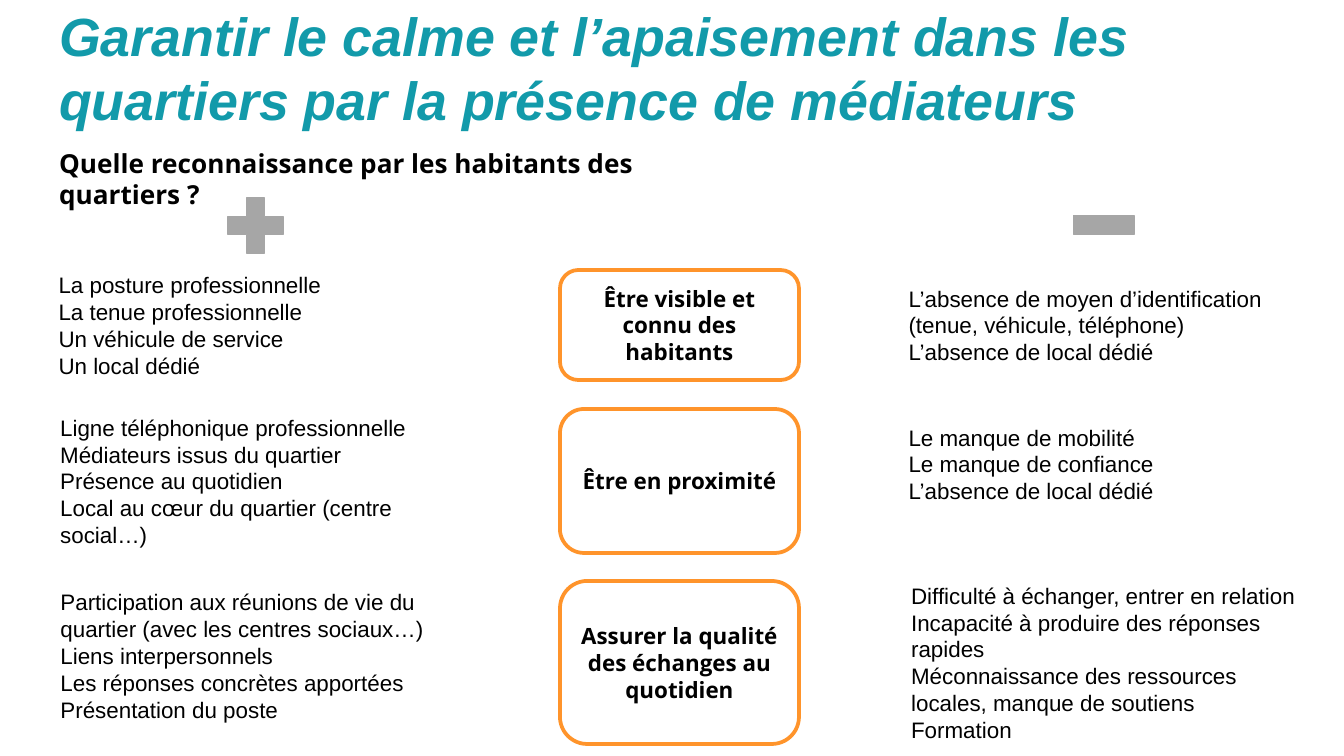
"""Build the slide on how residents recognise neighbourhood mediators."""
from pptx import Presentation, util as u
from pptx.dml.color import RGBColor
from pptx.enum import shapes, text

PX = 9144000 / 1344
THEME = {
    "teal": "129AAA", "black": "000000", "orange": "FF942B", "grey": "A6A6A6",
    "head": "Arial", "label": "Open Sans",
    "title": 28.8, "subtitle": 14, "body": 12, "leading": 1.2,
}
ROWS = [
    (270, "Être visible et connu des habitants", 110,
     ["La posture professionnelle", "La tenue professionnelle",
      "Un véhicule de service", "Un local dédié"], 110,
     ["L’absence de moyen d’identification (tenue, véhicule, téléphone)",
      "L’absence de local dédié"], 110),
    (409, "Être en proximité", 144,
     ["Ligne téléphonique professionnelle", "Médiateurs issus du quartier",
      "Présence au quotidien", "Local au cœur du quartier (centre social…)"], 144,
     ["Le manque de mobilité", "Le manque de confiance",
      "L’absence de local dédié"], 110),
    (581, "Assurer la qualité des échanges au quotidien", 163,
     ["Participation aux réunions de vie du quartier (avec les centres sociaux…)",
      "Liens interpersonnels", "Les réponses concrètes apportées",
      "Présentation du poste"], 149,
     ["Difficulté à échanger, entrer en relation",
      "Incapacité à produire des réponses rapides",
      "Méconnaissance des ressources locales, manque de soutiens",
      "Formation"], 163),
]


def box(kind, *px, fill=None, line=None, width=0.75):
    sp = s.shapes.add_shape(kind, *(round(v * PX) for v in px))
    sp.shadow.inherit = False
    for part, color in ((sp.fill, fill), (sp.line.fill, line)):
        if color:
            part.solid()
            part.fore_color.rgb = RGBColor.from_string(THEME[color])
        else:
            part.background()
    if line:
        sp.line.width = u.Pt(width)
    return sp


def write(sp, lines, size="body", font="head", color="black", bold=False,
          italic=False, align=text.PP_ALIGN.LEFT, anchor=text.MSO_ANCHOR.MIDDLE):
    tf = sp.text_frame
    tf.word_wrap = True
    tf.vertical_anchor = anchor
    for i, words in enumerate(lines):
        p = tf.add_paragraph() if i else tf.paragraphs[0]
        p.alignment = align
        p.line_spacing = u.Pt(THEME[size] * THEME["leading"])
        r = p.add_run()
        r.text = words
        r.font.size = u.Pt(THEME[size])
        r.font.name = THEME[font]
        r.font.bold = bold
        r.font.italic = italic
        r.font.color.rgb = RGBColor.from_string(THEME[color])


prs = Presentation()
prs.slide_width, prs.slide_height = round(1344 * PX), round(756 * PX)
s = prs.slides.add_slide(prs.slide_layouts[6])

headings = [
    ((46, 63, 1253, 82),
     "Garantir le calme et l’apaisement dans les quartiers par la présence de médiateurs",
     dict(size="title", color="teal", italic=True, anchor=text.MSO_ANCHOR.BOTTOM)),
    ((46, 134, 728, 59), "Quelle reconnaissance par les habitants des quartiers ?",
     dict(size="subtitle", font="label", anchor=text.MSO_ANCHOR.TOP)),
]
for px, words, style in headings:
    sp = s.shapes.add_textbox(*(round(v * PX) for v in px))
    tf = sp.text_frame
    tf.margin_left = tf.margin_right = tf.margin_top = tf.margin_bottom = u.Inches(0.1)
    write(sp, [words], bold=True, **style)

MSO = shapes.MSO_SHAPE
for kind, x, y, side in ((MSO.MATH_PLUS, 218, 188, 75), (MSO.MATH_MINUS, 1063, 184, 82)):
    sp = box(kind, x, y, side, side, fill="grey", line="grey")
    sp.adjustments[0] = 0.235

for top, label, label_h, strengths, strengths_h, limits, limits_h in ROWS:
    sp = box(MSO.ROUNDED_RECTANGLE, 560, top, 239, label_h, line="orange", width=2)
    write(sp, [label], font="label", bold=True, align=text.PP_ALIGN.CENTER)
    for x, lines, height in ((40, strengths, strengths_h), (890, limits, limits_h)):
        write(box(MSO.ROUNDED_RECTANGLE, x, top, 430, height), lines)

prs.save("out.pptx")
